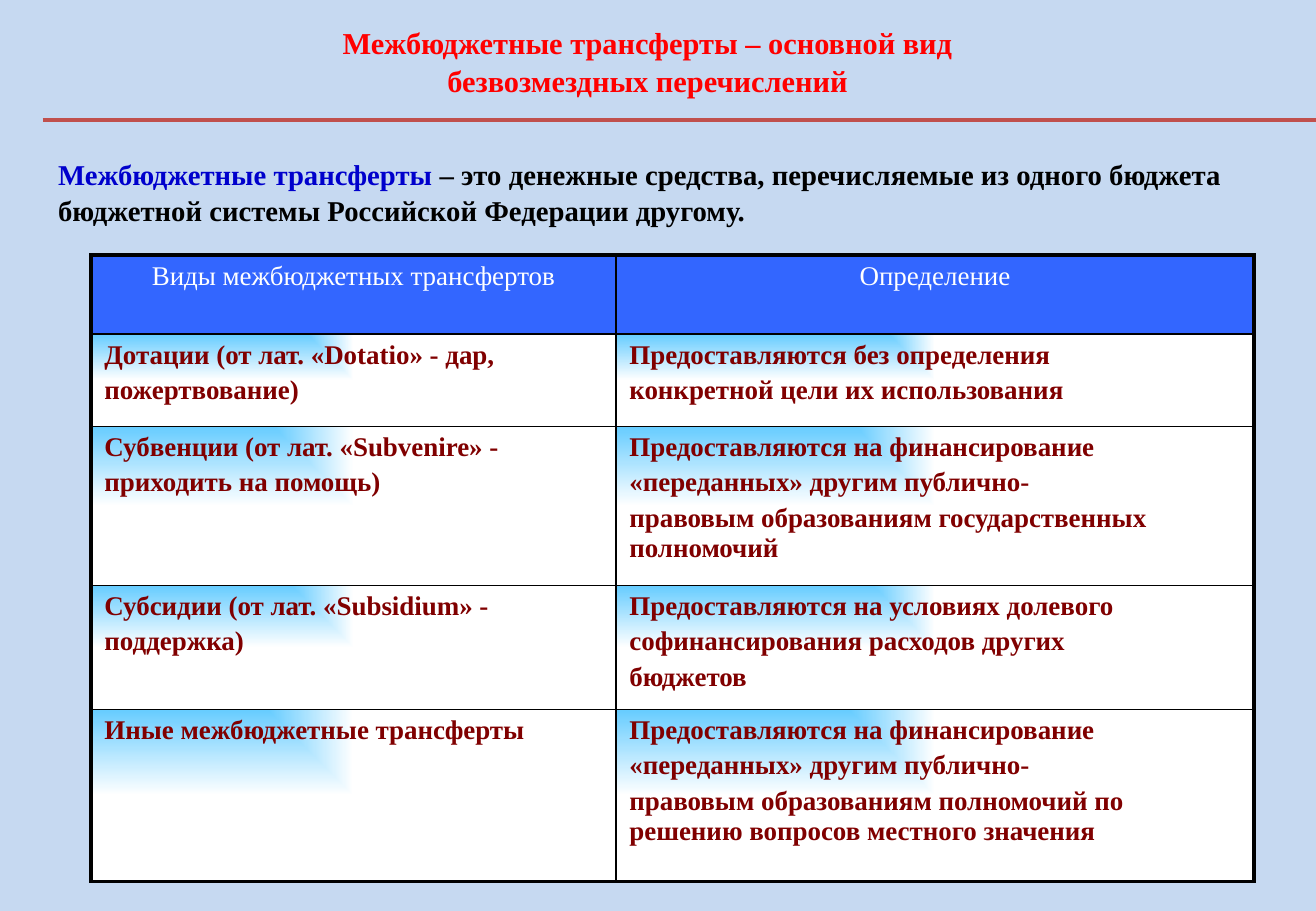
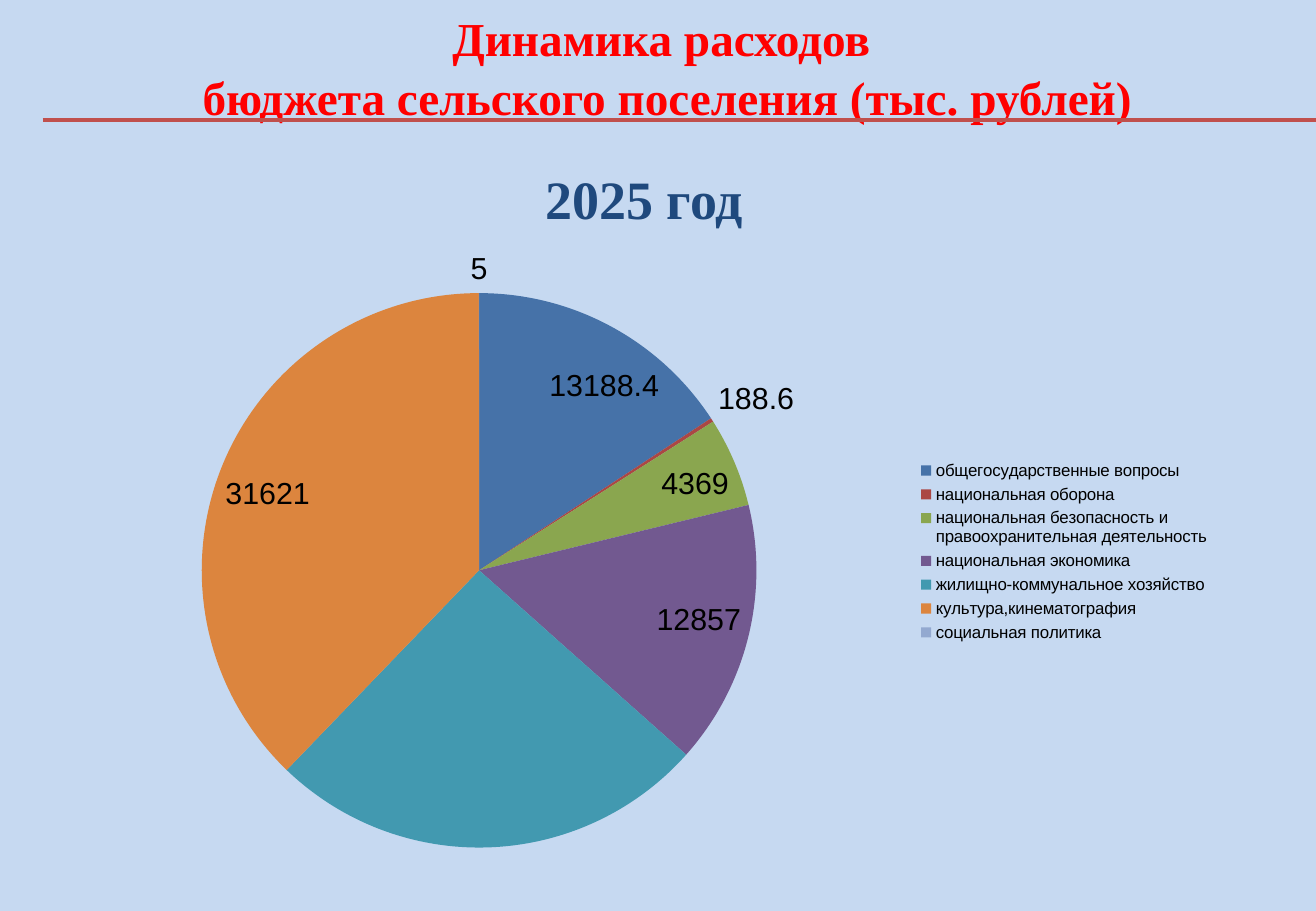
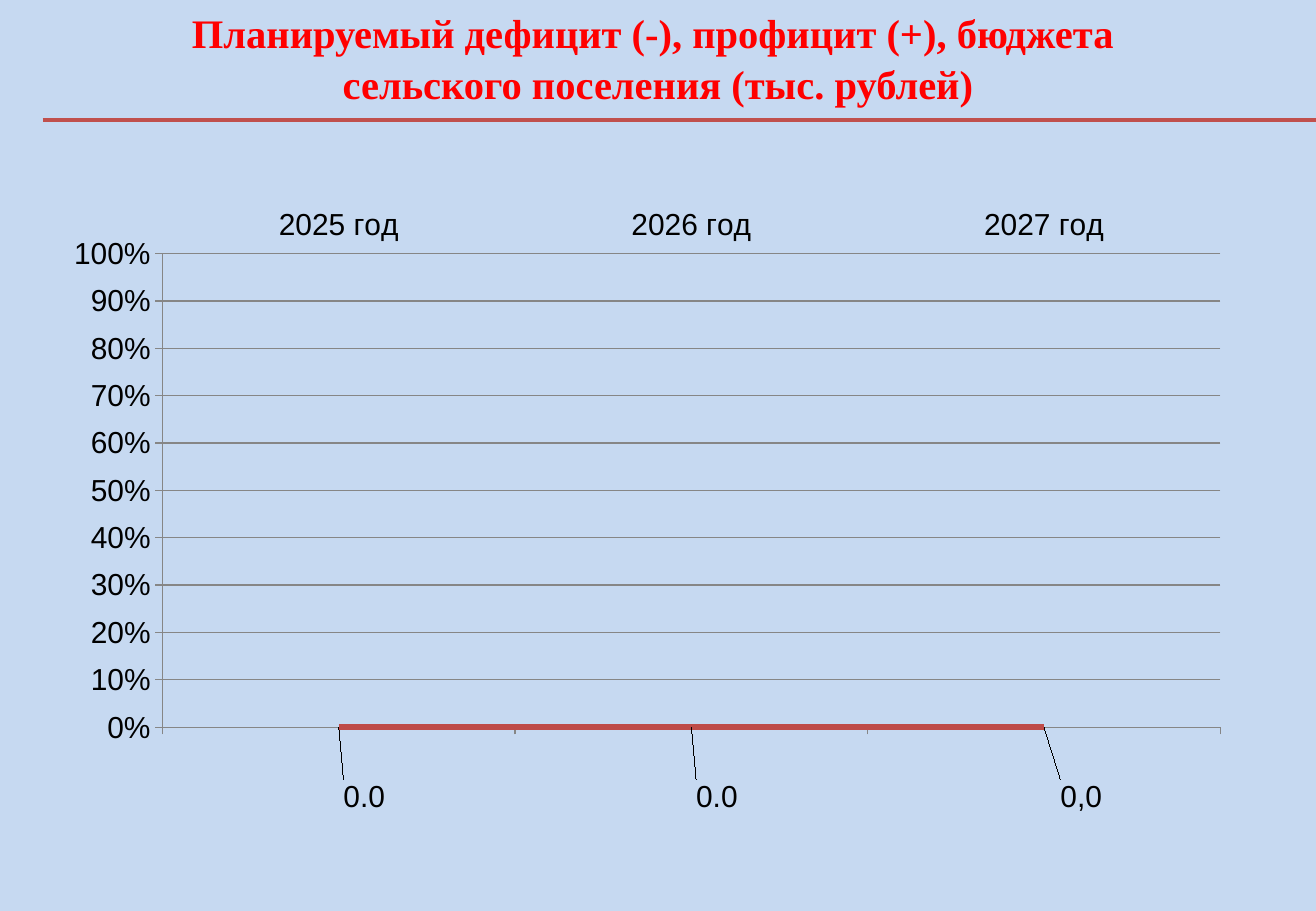
from lxml import etree
from pptx import Presentation
from pptx.chart.data import CategoryChartData
from pptx.dml.color import RGBColor
from pptx.enum.chart import (XL_CHART_TYPE, XL_LABEL_POSITION, XL_LEGEND_POSITION,
                             XL_MARKER_STYLE, XL_TICK_LABEL_POSITION, XL_TICK_MARK)
from pptx.enum.shapes import MSO_CONNECTOR
from pptx.enum.text import MSO_ANCHOR, MSO_AUTO_SIZE, PP_ALIGN
from pptx.oxml import parse_xml
from pptx.oxml.ns import nsdecls, qn
from pptx.util import Inches, Pt

CENTER, LEFT = PP_ALIGN.CENTER, PP_ALIGN.LEFT
TOP = MSO_ANCHOR.TOP
NO_AUTOSIZE = MSO_AUTO_SIZE.NONE
STRAIGHT = MSO_CONNECTOR.STRAIGHT
PIE, LINE_STACKED_100 = XL_CHART_TYPE.PIE, XL_CHART_TYPE.LINE_STACKED_100
BEST_FIT, LABEL_RIGHT = XL_LABEL_POSITION.BEST_FIT, XL_LABEL_POSITION.RIGHT
LEGEND_RIGHT = XL_LEGEND_POSITION.RIGHT
NO_MARKER = XL_MARKER_STYLE.NONE
LABELS_HIGH = XL_TICK_LABEL_POSITION.HIGH
TICK_OUTSIDE = XL_TICK_MARK.OUTSIDE

SERIF, SANS = "Times New Roman", "Arial"
BACKGROUND, RULE, TITLE = "C6D9F1", "C0504D", "FF0000"
BLACK, WHITE, AXIS = "000000", "FFFFFF", "868686"
TERM, YEAR, HEADER, CELL_TEXT = "0000CC", "1F497D", "3366FF", "800000"
GRADIENT = (
    f'<a:gradFill {nsdecls("a")} rotWithShape="0"><a:gsLst>'
    '<a:gs pos="0"><a:srgbClr val="66CCFF"/></a:gs>'
    '<a:gs pos="100000"><a:srgbClr val="FFFFFF"/></a:gs></a:gsLst>'
    '<a:path path="rect"><a:fillToRect r="100000" b="100000"/></a:path></a:gradFill>'
)


def color(value):
    return RGBColor.from_string(value)


def style_font(font, size, value, name=SERIF, bold=True):
    font.name = name
    font.size = Pt(size)
    font.bold = bold
    font.color.rgb = color(value)


presentation = Presentation()
presentation.slide_width = Inches(10.83)
presentation.slide_height = Inches(7.5)
background = presentation.slide_master.background.fill
background.solid()
background.fore_color.rgb = color(BACKGROUND)
layout = presentation.slide_layouts[5]

titles = [
    (18, (0.3, 0.13, 10.06, 0.7),
     ["Межбюджетные трансферты – основной вид", "безвозмездных перечислений"]),
    (28, (0.46, 0, 10.06, 1.04),
     ["Динамика расходов ", "бюджета сельского поселения (тыс. рублей)"]),
    (24, (0, 0, 10.83, 0.64),
     ["Планируемый дефицит (-), профицит (+), бюджета ",
      "сельского поселения (тыс. рублей)"]),
]
slides = []
for size, box, lines in titles:
    slide = presentation.slides.add_slide(layout)
    slides.append(slide)
    title = slide.shapes.title
    title.left, title.top, title.width, title.height = map(Inches, box)
    frame = title.text_frame
    frame.auto_size = NO_AUTOSIZE
    frame.vertical_anchor = TOP
    paragraph = frame.paragraphs[0]
    paragraph.alignment = CENTER
    paragraph.line_spacing = 1.05
    style_font(paragraph.font, size, TITLE)
    for index, line in enumerate(lines):
        if index:
            paragraph.add_line_break()
        run = paragraph.add_run()
        run.text = line
        style_font(run.font, size, TITLE)

    rule = slide.shapes.add_connector(
        STRAIGHT, Inches(0.35), Inches(0.99), Inches(10.83), Inches(0.99))
    rule.line.color.rgb = color(RULE)
    rule.line.width = Pt(2.5)
    etree.SubElement(rule._element.spPr, qn("a:effectLst"))

transfers_slide, expenses_slide, balance_slide = slides

definition = transfers_slide.shapes.add_textbox(
    Inches(0.38), Inches(1.23), Inches(10.07), Inches(0.66))
definition.text_frame.word_wrap = True
paragraph = definition.text_frame.paragraphs[0]
paragraph.line_spacing = 1.05
for text, value in [
    ("Межбюджетные трансферты", TERM),
    (" – это денежные средства, перечисляемые из одного бюджета "
     "бюджетной системы Российской Федерации другому.", BLACK),
]:
    run = paragraph.add_run()
    run.text = text
    style_font(run.font, 17, value)

transfers = [
    (["Виды межбюджетных трансфертов"], ["Определение"]),
    (["Дотации (от лат. «Dotatio» - дар,", "пожертвование)"],
     ["Предоставляются без определения", "конкретной цели их использования"]),
    (["Субвенции (от лат. «Subvenire» -", "приходить на помощь)"],
     ["Предоставляются на финансирование", "«переданных» другим публично-",
      "правовым образованиям государственных полномочий"]),
    (["Субсидии (от лат. «Subsidium» -", "поддержка)"],
     ["Предоставляются на условиях долевого", "софинансирования расходов других",
      "бюджетов"]),
    (["Иные межбюджетные трансферты"],
     ["Предоставляются на финансирование", "«переданных» другим публично-",
      "правовым образованиям полномочий по решению вопросов местного значения"]),
]
row_heights = [0.65, 0.76, 1.31, 1.02, 1.42]
table = transfers_slide.shapes.add_table(
    len(transfers), 2, Inches(0.75), Inches(2.1), Inches(9.57), Inches(5.16)).table
for column, width in zip(table.columns, [4.32, 5.25]):
    column.width = Inches(width)
for row_index, (row, height) in enumerate(zip(transfers, row_heights)):
    table.rows[row_index].height = Inches(height)
    is_header = row_index == 0
    for column_index, lines in enumerate(row):
        cell = table.cell(row_index, column_index)
        cell.margin_left = cell.margin_right = Inches(0.11)
        cell.margin_top = cell.margin_bottom = Inches(0.05)
        for line_index, line in enumerate(lines):
            frame = cell.text_frame
            paragraph = frame.add_paragraph() if line_index else frame.paragraphs[0]
            paragraph.alignment = CENTER if is_header else LEFT
            paragraph.space_before = Pt(3.2)
            run = paragraph.add_run()
            run.text = line
            style_font(run.font, 16, WHITE if is_header else CELL_TEXT, bold=not is_header)
        properties = cell._tc.get_or_add_tcPr()
        outer_edges = {
            "lnL": column_index == 0,
            "lnR": column_index == 1,
            "lnT": is_header,
            "lnB": row_index == len(transfers) - 1,
        }
        for edge, is_outer in outer_edges.items():
            properties.append(parse_xml(
                f'<a:{edge} {nsdecls("a")} w="{Pt(2.25 if is_outer else 1)}">'
                f'<a:solidFill><a:srgbClr val="{BLACK}"/></a:solidFill></a:{edge}>'))
        if is_header:
            cell.fill.solid()
            cell.fill.fore_color.rgb = color(HEADER)
        else:
            properties.append(parse_xml(GRADIENT))

year_box = expenses_slide.shapes.add_textbox(
    Inches(4.39), Inches(1.31), Inches(1.96), Inches(0.64))
year_box.text_frame.word_wrap = False
run = year_box.text_frame.paragraphs[0].add_run()
run.text = "2025 год"
style_font(run.font, 32, YEAR)

expenses = [
    ("общегосударственные вопросы", 13188.4, "4672A8"),
    ("национальная оборона", 188.6, "AB4744"),
    ("национальная безопасность и правоохранительная деятельность", 4369, "8AA64F"),
    ("национальная экономика", 12857, "725990"),
    ("жилищно-коммунальное хозяйство", 21432.9, "4299B0"),
    ("культура,кинематография", 31621, "DC853E"),
    ("социальная политика", 5, "93A9D0"),
]
expense_data = CategoryChartData()
expense_data.categories = [name for name, amount, fill in expenses]
expense_data.add_series("Series 1", [amount for name, amount, fill in expenses])
balance_data = CategoryChartData()
balance_data.categories = ["2025 год", "2026 год", "2027 год"]
balance_data.add_series("Series 1", [0, 0, 0])

charts = []
for slide, kind, box, data, plot_area in [
    (expenses_slide, PIE, (0.93, 1.94, 9.13, 5.2), expense_data, (0.08, 0.09, 0.5, 0.88)),
    (balance_slide, LINE_STACKED_100, (0.61, 1.62, 9.82, 5.2), balance_data,
     (0.06, 0.09, 0.9, 0.75)),
]:
    chart = slide.shapes.add_chart(kind, *map(Inches, box), data).chart
    charts.append(chart)
    chart.has_title = False
    chart.has_legend = False
    style_font(chart.font, 18, BLACK, SANS, False)
    area = chart._chartSpace.chart.plotArea
    for old_layout in area.findall(qn("c:layout")):
        area.remove(old_layout)
    sizes = "".join(f'<c:{key} val="{value}"/>' for key, value in zip("xywh", plot_area))
    area.insert(0, parse_xml(
        f'<c:layout {nsdecls("c")}><c:manualLayout><c:layoutTarget val="inner"/>'
        f'<c:xMode val="edge"/><c:yMode val="edge"/>{sizes}</c:manualLayout></c:layout>'))

expense_chart, balance_chart = charts
expense_chart.has_legend = True
expense_chart.legend.position = LEGEND_RIGHT
expense_chart.legend.include_in_layout = False
style_font(expense_chart.legend.font, 10, BLACK, SANS, False)
expense_chart.plots[0].vary_by_categories = True
expense_series = expense_chart.plots[0].series[0]
for index, (name, amount, fill) in enumerate(expenses):
    slice_fill = expense_series.points[index].format.fill
    slice_fill.solid()
    slice_fill.fore_color.rgb = color(fill)
labels = expense_series.data_labels
labels.show_value = True
labels.position = BEST_FIT
housing_label = expense_series.points[4].data_label._get_or_add_dLbl()
for child in list(housing_label)[1:]:
    housing_label.remove(child)
etree.SubElement(housing_label, qn("c:delete")).set("val", "1")

balance_chart.plots[0].vary_by_categories = False
balance_series = balance_chart.plots[0].series[0]
balance_series.smooth = False
balance_series.marker.style = NO_MARKER
balance_series.format.line.color.rgb = color("BE4B48")
balance_series.format.line.width = Pt(3.5)
labels = balance_series.data_labels
labels.show_value = True
labels.number_format = "#,##0.0"
labels.number_format_is_linked = False
for index, (shift_x, shift_y, text) in enumerate(
        [(0, 0.11, ""), (0, 0.11, ""), (0.01, 0.11, "0,0")]):
    label = balance_series.points[index].data_label
    label.position = LABEL_RIGHT
    if text:
        run = label.text_frame.paragraphs[0].add_run()
        run.text = text
        style_font(run.font, 18, BLACK, SANS, False)
    element = label._get_or_add_dLbl()
    element.insert(1, parse_xml(
        f'<c:layout {nsdecls("c")}><c:manualLayout><c:x val="{shift_x}"/>'
        f'<c:y val="{shift_y}"/></c:manualLayout></c:layout>'))
    if not text:
        element.insert(2, parse_xml(
            f'<c:numFmt {nsdecls("c")} formatCode="#,##0.0" sourceLinked="0"/>'))

category_axis, value_axis = balance_chart.category_axis, balance_chart.value_axis
category_axis.tick_label_position = LABELS_HIGH
value_axis.minimum_scale = 0
value_axis.maximum_scale = 1
value_axis.major_unit = 0.1
value_axis.tick_labels.number_format = "0%"
value_axis.tick_labels.number_format_is_linked = False
value_axis.has_major_gridlines = True
for axis in (category_axis, value_axis):
    axis.major_tick_mark = TICK_OUTSIDE
for line in (category_axis.format.line, value_axis.format.line,
             value_axis.major_gridlines.format.line):
    line.color.rgb = color(AXIS)
    line.width = Pt(0.75)

presentation.save("out.pptx")
